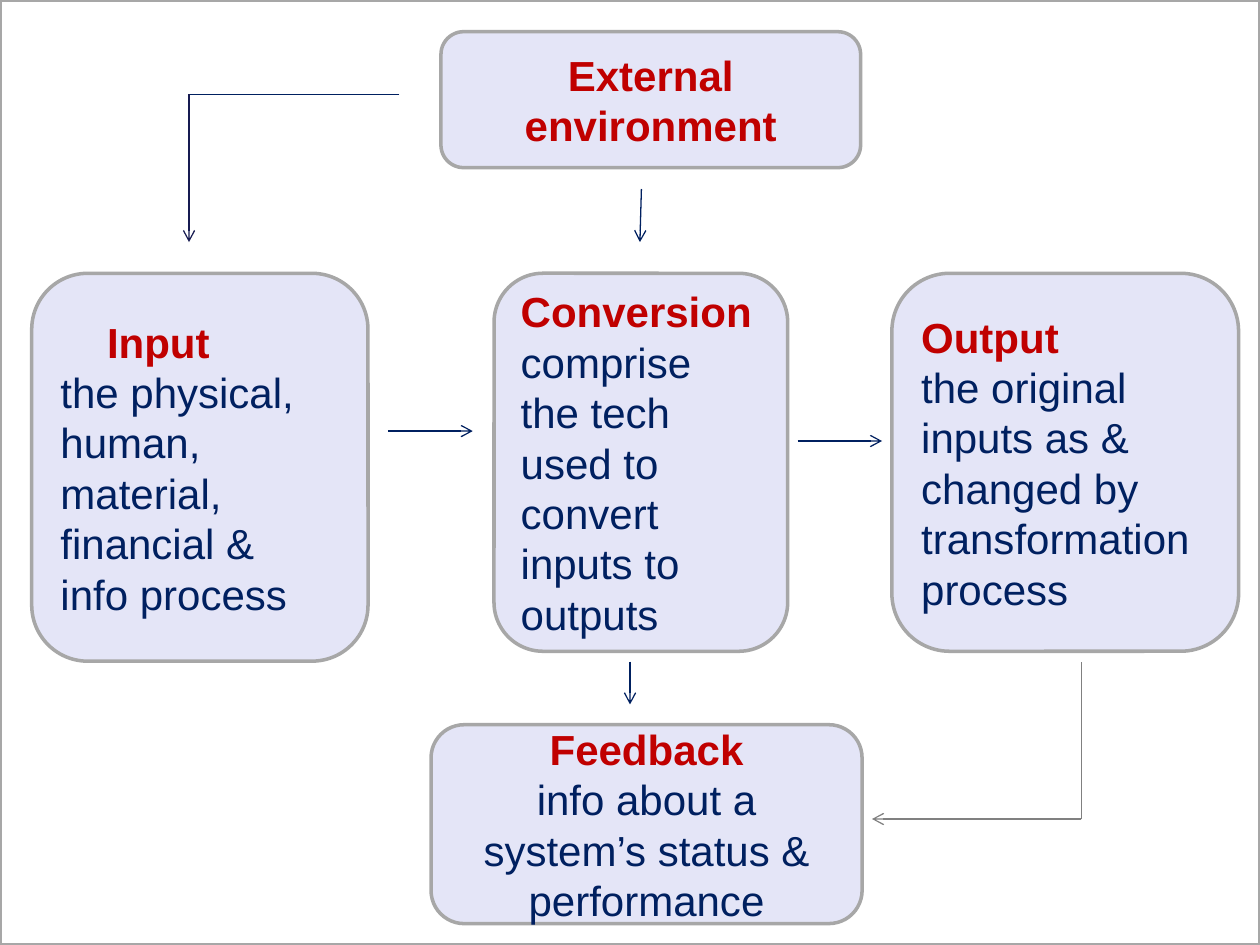
from pptx import Presentation
from pptx.util import Cm, Pt
from pptx.dml.color import RGBColor
from pptx.enum.shapes import MSO_SHAPE as Shape, MSO_CONNECTOR as Link
from pptx.enum.text import MSO_ANCHOR as Anchor, PP_ALIGN as Align
from pptx.oxml.ns import qn
from lxml.etree import SubElement

RED, NAVY, GREY = "C00000", "002060", "808080"


def paint(color, code):
    color.rgb = RGBColor.from_string(code)


def panel(kind, box, fill):
    shape = slide.shapes.add_shape(kind, *[Cm(v) for v in box])
    shape.shadow.inherit = False
    shape.fill.solid()
    paint(shape.fill.fore_color, fill)
    paint(shape.line.color, "A7A7A7")
    shape.line.width = Pt(2)
    return shape


prs = Presentation()
prs.slide_width, prs.slide_height = Cm(25.4), Cm(19.05)
slide = prs.slides.add_slide(prs.slide_layouts[6])

# Framed background
panel(Shape.RECTANGLE, (0, 0, 25.4, 19.05), "FFFFFF")

# Boxes: place, alignment, heading indent, heading, body paragraphs
boxes = [
    ((8.89, 0.64, 8.46, 2.74), Align.CENTER, 0, "External environment", []),
    ((0.64, 5.51, 6.78, 7.82), Align.LEFT, 0.94, "Input",
     ["the physical, human, material,", "financial &", "info process"]),
    ((9.96, 5.51, 5.92, 7.62), Align.LEFT, 0, "Conversion",
     ["comprise the tech used to convert inputs to outputs"]),
    ((17.98, 5.51, 6.99, 7.62), Align.LEFT, 0, "Output",
     ["the original inputs as & changed by transformation process"]),
    ((8.69, 14.61, 8.69, 4.01), Align.CENTER, 0, "Feedback",
     ["info about a system’s status & performance"]),
]
for box, align, indent, head, body in boxes:
    frame = panel(Shape.ROUNDED_RECTANGLE, box, "E4E5F7").text_frame
    frame.word_wrap = True
    frame.vertical_anchor = Anchor.MIDDLE
    for i, text in enumerate([head] + body):
        para = frame.add_paragraph() if i else frame.paragraphs[0]
        para.text = text
        para.alignment = align
        font = para.font
        font.name, font.size, font.bold = "Arial", Pt(24), i == 0
        paint(font.color, NAVY if i else RED)
    if indent:
        props = frame.paragraphs[0]._p.get_or_add_pPr()
        props.set("marL", str(Cm(indent)))
        props.set("indent", "0")

# Flow lines: start, end, colour, arrowhead
lines = [
    ((12.93, 3.81), (12.9, 4.88), NAVY, True),
    ((12.7, 13.34), (12.7, 14.2), NAVY, True),
    ((7.82, 8.69), (9.53, 8.69), NAVY, True),
    ((16.08, 8.89), (17.78, 8.89), NAVY, True),
    ((8.05, 1.9), (3.81, 1.9), NAVY, False),
    ((3.81, 1.9), (3.81, 4.88), "171B51", True),
    ((21.8, 16.51), (17.58, 16.51), GREY, True),
    ((21.8, 16.51), (21.8, 13.34), GREY, False),
]
for start, end, code, arrow in lines:
    line = slide.shapes.add_connector(
        Link.STRAIGHT, *[Cm(v) for v in start + end])
    paint(line.line.color, code)
    line.line.width = Pt(0.75)
    if arrow:
        SubElement(line.line._get_or_add_ln(), qn("a:tailEnd"), type="arrow")
    SubElement(line._element.spPr, qn("a:effectLst"))

prs.save("out.pptx")
